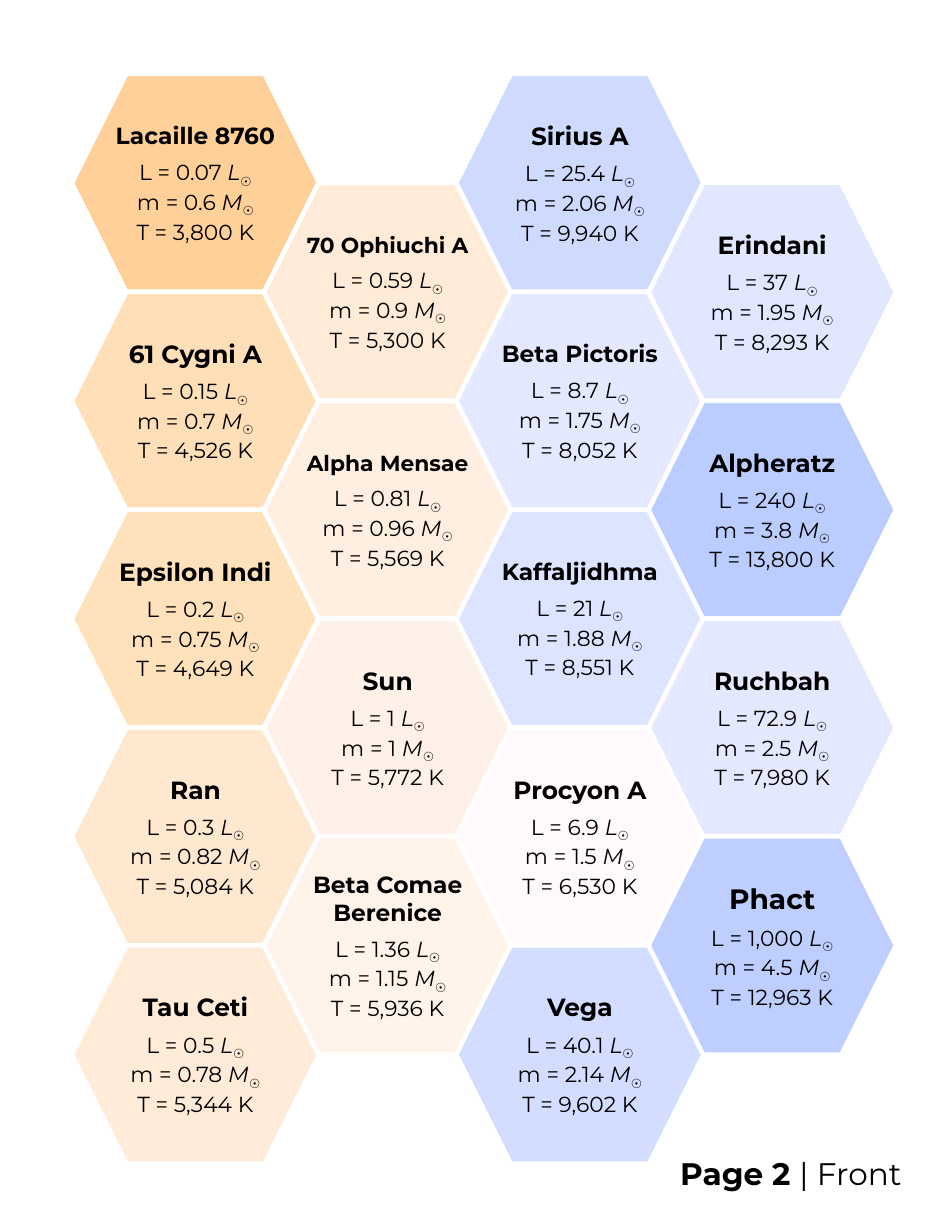
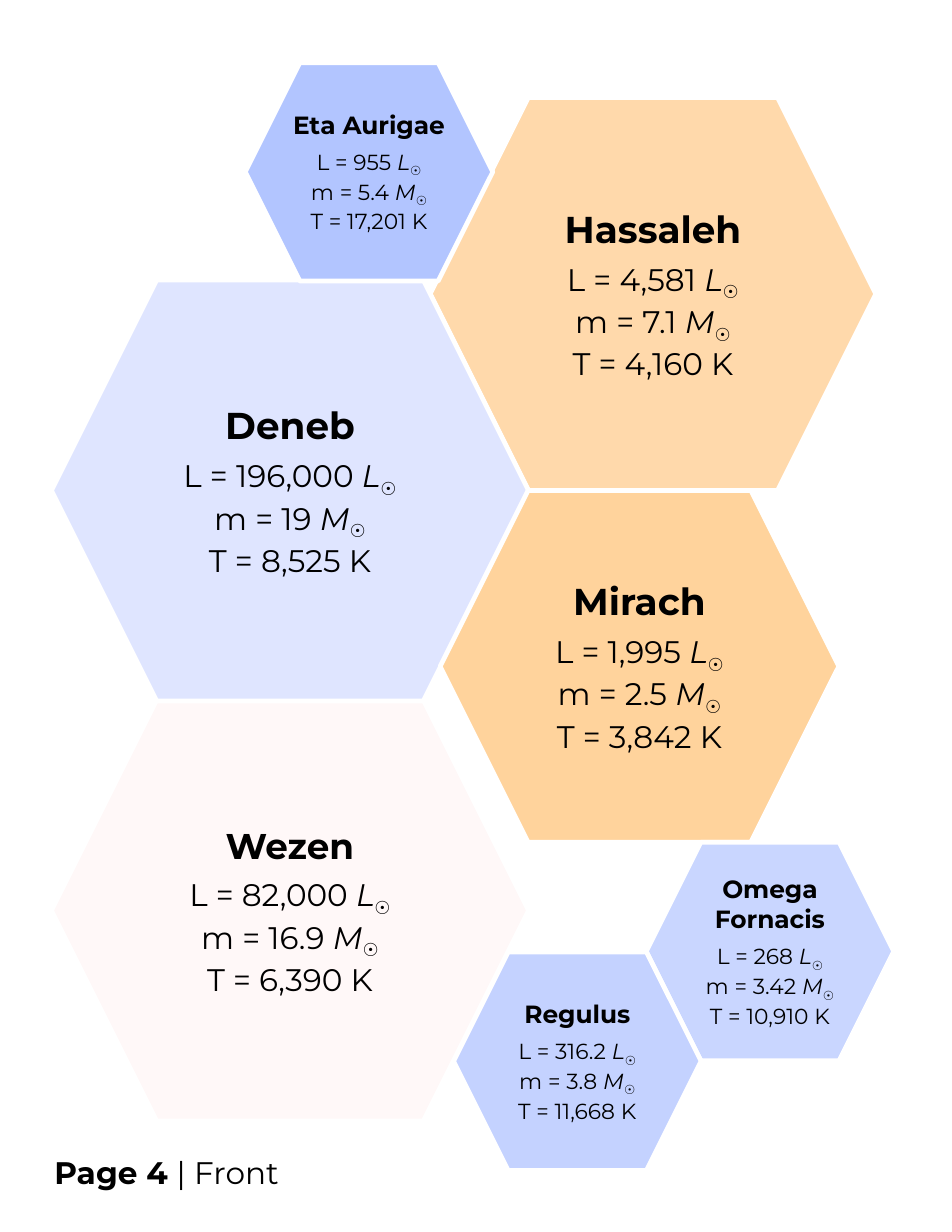
from dataclasses import dataclass

from pptx import Presentation
from pptx.dml.color import RGBColor
from pptx.enum.shapes import MSO_SHAPE
from pptx.enum.text import MSO_ANCHOR, MSO_AUTO_SIZE, PP_ALIGN
from pptx.util import Inches, Pt

FONT = "Montserrat"
BLACK = RGBColor(0x00, 0x00, 0x00)
WHITE = RGBColor(0xFF, 0xFF, 0xFF)
SUN_SYMBOL = "☉"
TILE_WIDTH, TILE_HEIGHT = 2.21, 1.95
TITLE_ONLY_LAYOUT = 5


@dataclass
class Star:
    name: str
    luminosity: str
    mass: str
    temperature: str
    colour: RGBColor
    name_size: int = 16
    value_size: int = 14


STAR_COLUMNS = [
    [
        Star("Lacaille 8760", "0.07", "0.6", "3,800", RGBColor(0xFF, 0xD0, 0x97), 15),
        Star("61 Cygni A", "0.15", "0.7", "4,526", RGBColor(0xFF, 0xDF, 0xB8)),
        Star("Epsilon Indi", "0.2", "0.75", "4,649", RGBColor(0xFF, 0xE1, 0xBC)),
        Star("Ran", "0.3", "0.82", "5,084", RGBColor(0xFF, 0xE8, 0xD0)),
        Star("Tau Ceti", "0.5", "0.78", "5,344", RGBColor(0xFF, 0xEB, 0xD7)),
    ],
    [
        Star("70 Ophiuchi A", "0.59", "0.9", "5,300", RGBColor(0xFF, 0xEB, 0xD7), 14),
        Star("Alpha Mensae", "0.81", "0.96", "5,569", RGBColor(0xFF, 0xEF, 0xE1), 14),
        Star("Sun", "1", "1", "5,772", RGBColor(0xFF, 0xF1, 0xE7)),
        Star("Beta Comae Berenice", "1.36", "1.15", "5,936", RGBColor(0xFF, 0xF3, 0xEA), 15),
    ],
    [
        Star("Sirius A", "25.4", "2.06", "9,940", RGBColor(0xCF, 0xDA, 0xFF)),
        Star("Beta Pictoris", "8.7", "1.75", "8,052", RGBColor(0xE5, 0xE9, 0xFF), 15),
        Star("Kaffaljidhma", "21", "1.88", "8,551", RGBColor(0xDD, 0xE4, 0xFF), 15),
        Star("Procyon A", "6.9", "1.5", "6,530", RGBColor(0xFF, 0xF9, 0xFB)),
        Star("Vega", "40.1", "2.14", "9,602", RGBColor(0xD3, 0xDD, 0xFF)),
    ],
    [
        Star("Erindani", "37", "1.95", "8,293", RGBColor(0xE1, 0xE7, 0xFF)),
        Star("Alpheratz", "240", "3.8", "13,800", RGBColor(0xBB, 0xCC, 0xFF)),
        Star("Ruchbah", "72.9", "2.5", "7,980", RGBColor(0xE5, 0xE9, 0xFF)),
        Star("Phact", "1,000", "4.5", "12,963", RGBColor(0xBE, 0xCE, 0xFF), 18),
    ],
]

GIANT_STARS = [
    (Star("Wezen", "82,000", "16.9", "6,390", RGBColor(0xFF, 0xF8, 0xF8), 23, 20),
     (0.46, 6.25, 4.26, 3.76)),
    (Star("Hassaleh", "4,581", "7.1", "4,160", RGBColor(0xFF, 0xD9, 0xAB), 24, 20),
     (3.84, 0.87, 3.98, 3.51)),
    (Star("Deneb", "196,000", "19", "8,525", RGBColor(0xDF, 0xE5, 0xFF), 24, 20),
     (0.46, 2.5, 4.26, 3.76)),
    (Star("Mirach", "1,995", "2.5", "3,842", RGBColor(0xFF, 0xD3, 0x9C), 24, 20),
     (3.93, 4.38, 3.56, 3.14)),
    (Star("Omega Fornacis", "268", "3.42", "10,910", RGBColor(0xC9, 0xD6, 0xFF)),
     (5.77, 7.52, TILE_WIDTH, TILE_HEIGHT)),
    (Star("Eta Aurigae", "955", "5.4", "17,201", RGBColor(0xB2, 0xC5, 0xFF)),
     (2.19, 0.56, TILE_WIDTH, TILE_HEIGHT)),
    (Star("Regulus", "316.2", "3.8", "11,668", RGBColor(0xC4, 0xD2, 0xFF)),
     (4.05, 8.5, TILE_WIDTH, TILE_HEIGHT)),
]


def format_paragraph(paragraph, size, alignment):
    paragraph.alignment = alignment
    paragraph.font.name = FONT
    paragraph.font.size = Pt(size)
    paragraph.font.color.rgb = BLACK


def add_run(paragraph, text):
    run = paragraph.add_run()
    run.text = text
    return run


def add_value(text_frame, text, size, unit=None):
    paragraph = text_frame.add_paragraph()
    format_paragraph(paragraph, size, PP_ALIGN.CENTER)
    add_run(paragraph, text)
    if unit:
        paragraph.runs[0].text += " "
        add_run(paragraph, unit).font.italic = True
        symbol = add_run(paragraph, SUN_SYMBOL)
        symbol.font.italic = True
        symbol._r.get_or_add_rPr().set("baseline", "-25000")


def add_star(slide, star, box):
    hexagon = slide.shapes.add_shape(MSO_SHAPE.HEXAGON, *map(Inches, box))
    hexagon.shadow.inherit = False
    hexagon.fill.solid()
    hexagon.fill.fore_color.rgb = star.colour
    hexagon.line.color.rgb = WHITE
    hexagon.line.width = Pt(3)

    text_frame = hexagon.text_frame
    text_frame.word_wrap = True
    text_frame.vertical_anchor = MSO_ANCHOR.MIDDLE
    text_frame.margin_left = text_frame.margin_right = 0
    text_frame.margin_top = text_frame.margin_bottom = 0

    heading = text_frame.paragraphs[0]
    format_paragraph(heading, star.name_size, PP_ALIGN.CENTER)
    heading.font.bold = True
    heading.space_after = Pt(6)
    add_run(heading, star.name)
    add_value(text_frame, f"L = {star.luminosity}", star.value_size, "L")
    add_value(text_frame, f"m = {star.mass}", star.value_size, "M")
    add_value(text_frame, f"T = {star.temperature} K", star.value_size)


def add_page(presentation, page_number, label_box):
    slide = presentation.slides.add_slide(presentation.slide_layouts[TITLE_ONLY_LAYOUT])
    title = slide.shapes.title
    title.left, title.top, title.width, title.height = map(Inches, label_box)
    text_frame = title.text_frame
    text_frame.word_wrap = False
    text_frame.auto_size = MSO_AUTO_SIZE.SHAPE_TO_FIT_TEXT
    text_frame.vertical_anchor = MSO_ANCHOR.TOP
    paragraph = text_frame.paragraphs[0]
    format_paragraph(paragraph, 20, PP_ALIGN.RIGHT)
    add_run(paragraph, f"Page {page_number} ").font.bold = True
    add_run(paragraph, "| Front").font.bold = False
    return slide


def add_honeycomb(slide, box):
    left, top, width, height = box
    column_pitch = (width - TILE_WIDTH) / (len(STAR_COLUMNS) - 1)
    row_pitch = (height - TILE_HEIGHT) / (len(STAR_COLUMNS[0]) - 1)
    for column, stars in enumerate(STAR_COLUMNS):
        for row, star in enumerate(stars):
            tile_left = left + column * column_pitch
            tile_top = top + (row + column % 2 / 2) * row_pitch
            add_star(slide, star, (tile_left, tile_top, TILE_WIDTH, TILE_HEIGHT))


def add_giants(slide):
    for star, box in GIANT_STARS:
        add_star(slide, star, box)


def main():
    presentation = Presentation()
    presentation.slide_width = Inches(8.5)
    presentation.slide_height = Inches(11)
    add_honeycomb(add_page(presentation, 2, (5.95, 10.26, 2.2, 0.44)), (0.64, 0.66, 7.36, 9.73))
    add_giants(add_page(presentation, 4, (0.36, 10.25, 2.23, 0.44)))
    presentation.save("out.pptx")


if __name__ == "__main__":
    main()
